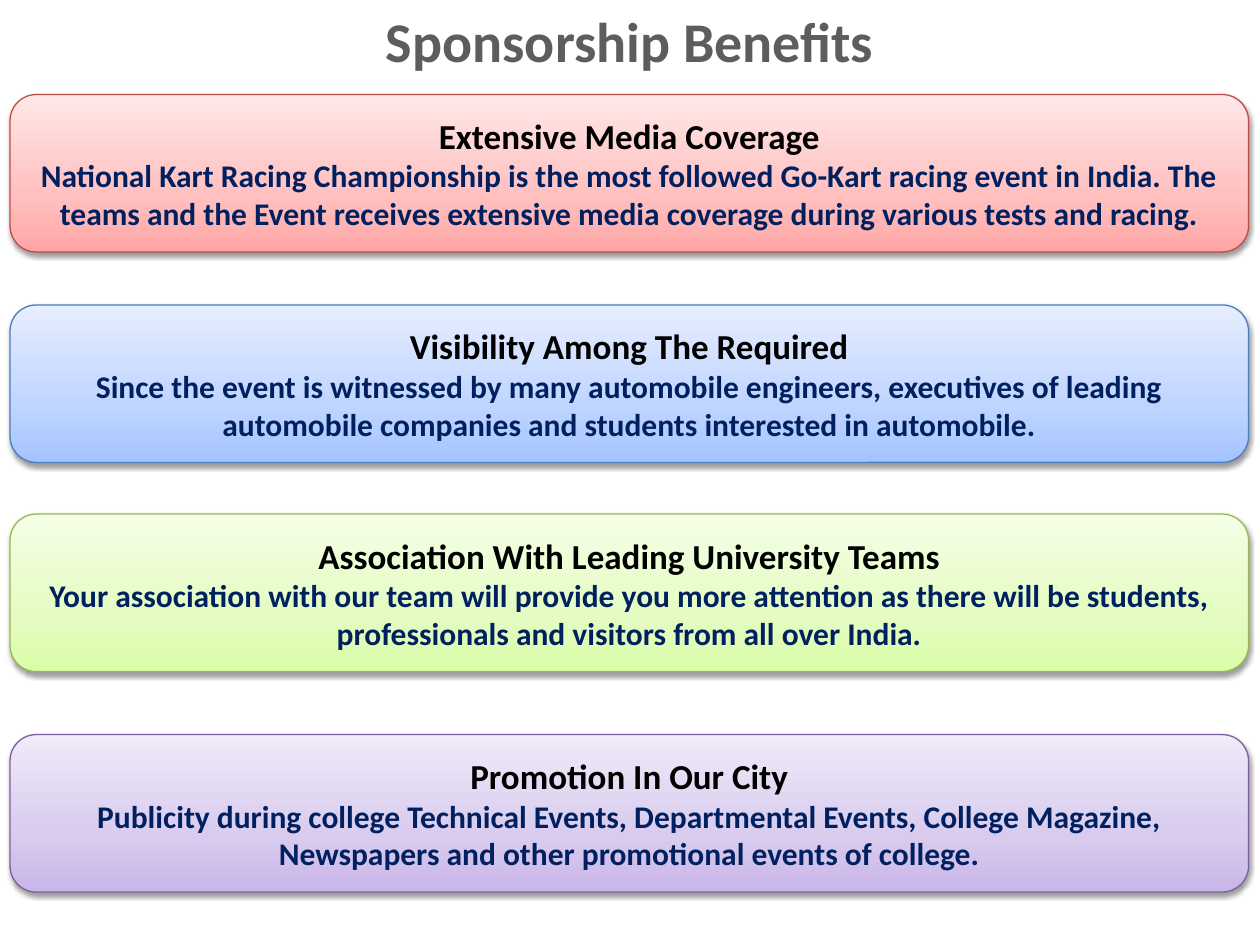
from lxml import etree
from pptx import Presentation
from pptx.dml.color import RGBColor
from pptx.enum.shapes import MSO_SHAPE
from pptx.enum.text import MSO_ANCHOR, PP_ALIGN
from pptx.oxml.ns import qn
from pptx.util import Inches, Pt

ROUNDED = MSO_SHAPE.ROUNDED_RECTANGLE
MIDDLE = MSO_ANCHOR.MIDDLE
CENTER = PP_ALIGN.CENTER

TITLE = "Sponsorship Benefits"
BENEFITS = [
    {
        "top": 0.75,
        "palette": "red",
        "heading": "Extensive Media Coverage",
        "body": "National Kart Racing Championship is the most followed Go-Kart racing event in India. "
                "The teams and the Event receives extensive media coverage during various tests and racing.",
    },
    {
        "top": 2.42,
        "palette": "blue",
        "heading": "Visibility Among The Required",
        "body": "Since the event is witnessed by many automobile engineers, executives of leading "
                "automobile companies and students interested in automobile.",
    },
    {
        "top": 4.08,
        "palette": "green",
        "heading": "Association With Leading University Teams",
        "body": "Your association with our team will provide you more attention as there will be "
                "students, professionals and visitors from all over India.",
    },
    {
        "top": 5.83,
        "palette": "purple",
        "heading": "Promotion In Our City",
        "body": "Publicity during college Technical Events, Departmental Events, College Magazine, "
                "Newspapers and other promotional events of college.",
    },
]

THEME = {
    "font": "Calibri",
    "title": (32, "5D5D5D"),
    "heading": (20, "000000"),
    "body": (18, "002060"),
    "stops": (0, 35, 100),
    "palettes": {
        "red": (("FFA6A5", "FFC0BF", "FFE7E7"), "BF4C48"),
        "blue": (("A4C4FF", "BFD4FF", "E6EEFF"), "4B7EBC"),
        "green": (("DAFDA7", "E4FCC2", "F5FFE7"), "98B955"),
        "purple": (("C9B5E8", "D8CBEE", "F0EAF9"), "7D60A0"),
    },
}

SLIDE_WIDTH, SLIDE_HEIGHT = 10, 7.5
CARD_LEFT, CARD_WIDTH, CARD_HEIGHT = 0.08, 9.83, 1.25


def write_paragraph(paragraph, text, style):
    size, color = THEME[style]
    paragraph.text = text
    paragraph.alignment = CENTER
    font = paragraph.font
    font.name = THEME["font"]
    font.size = Pt(size)
    font.bold = True
    font.color.rgb = RGBColor.from_string(color)


def add_color(parent, color):
    return etree.SubElement(parent, qn("a:srgbClr"), val=color)


def fill_gradient(shape, colors):
    shape.fill.gradient()
    shape.fill.gradient_angle = 90
    stop_list = shape._element.spPr.find(".//" + qn("a:gsLst"))
    for stop in list(stop_list):
        stop_list.remove(stop)
    for position, color in zip(THEME["stops"], colors):
        stop = etree.SubElement(stop_list, qn("a:gs"), pos=str(position * 1000))
        add_color(stop, color)


def add_shadow(shape):
    shape.shadow.inherit = False
    effects = shape._element.spPr.find(qn("a:effectLst"))
    shadow = etree.SubElement(
        effects, qn("a:outerShdw"), blurRad=str(Pt(3.1)), dist=str(Pt(1.6)),
        dir="5400000", rotWithShape="0",
    )
    etree.SubElement(add_color(shadow, "000000"), qn("a:alpha"), val="38000")


def add_title(slide):
    box = slide.shapes.add_textbox(0, 0, Inches(SLIDE_WIDTH), Inches(0.64))
    box.text_frame.word_wrap = True
    write_paragraph(box.text_frame.paragraphs[0], TITLE, "title")


def add_card(slide, benefit):
    colors, outline = THEME["palettes"][benefit["palette"]]
    card = slide.shapes.add_shape(
        ROUNDED, Inches(CARD_LEFT), Inches(benefit["top"]),
        Inches(CARD_WIDTH), Inches(CARD_HEIGHT),
    )
    fill_gradient(card, colors)
    card.line.color.rgb = RGBColor.from_string(outline)
    card.line.width = Pt(0.75)
    add_shadow(card)
    frame = card.text_frame
    frame.word_wrap = True
    frame.vertical_anchor = MIDDLE
    write_paragraph(frame.paragraphs[0], benefit["heading"], "heading")
    write_paragraph(frame.add_paragraph(), benefit["body"], "body")


def main():
    presentation = Presentation()
    presentation.slide_width = Inches(SLIDE_WIDTH)
    presentation.slide_height = Inches(SLIDE_HEIGHT)
    slide = presentation.slides.add_slide(presentation.slide_layouts[6])
    add_title(slide)
    for benefit in BENEFITS:
        add_card(slide, benefit)
    presentation.save("out.pptx")


if __name__ == "__main__":
    main()
